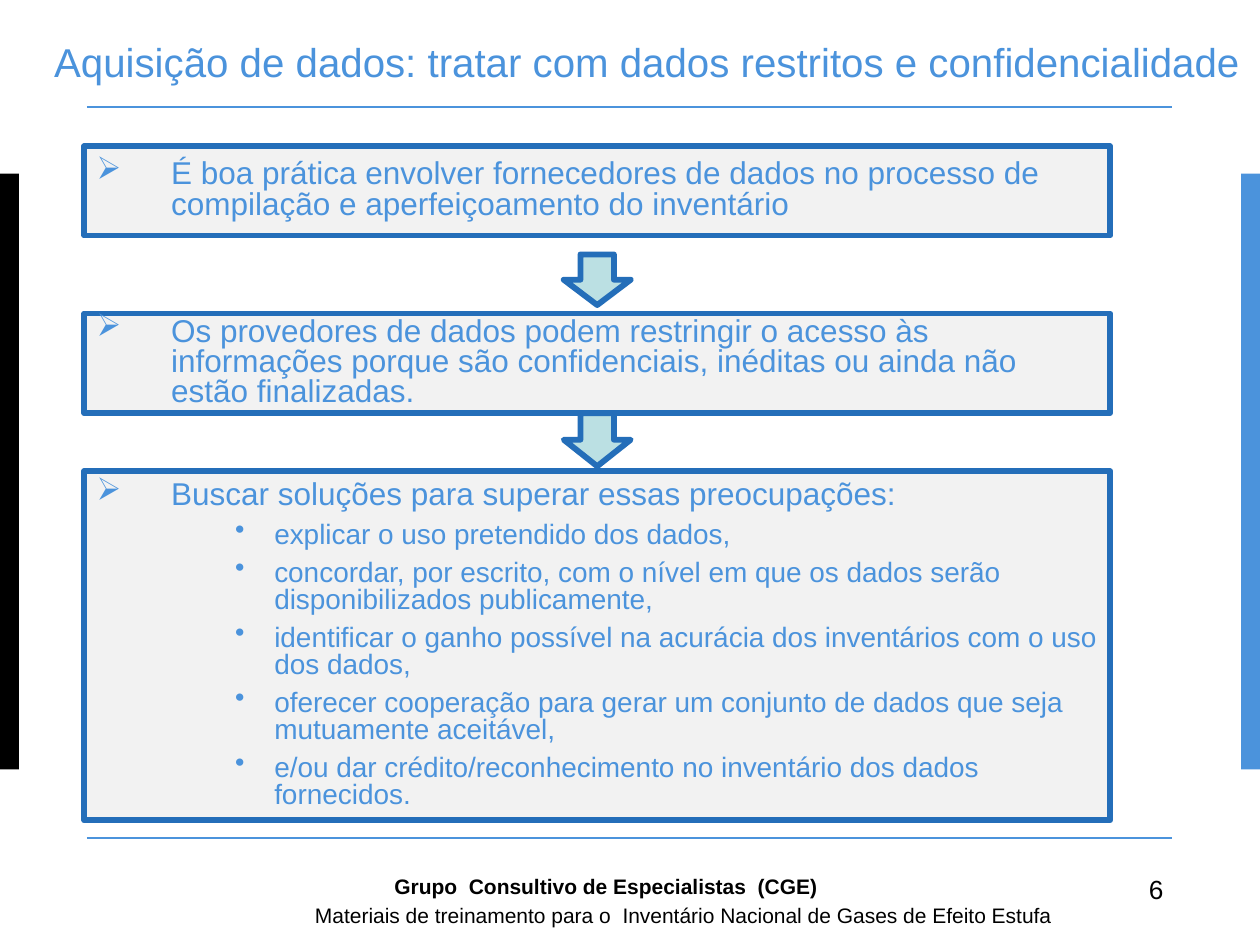
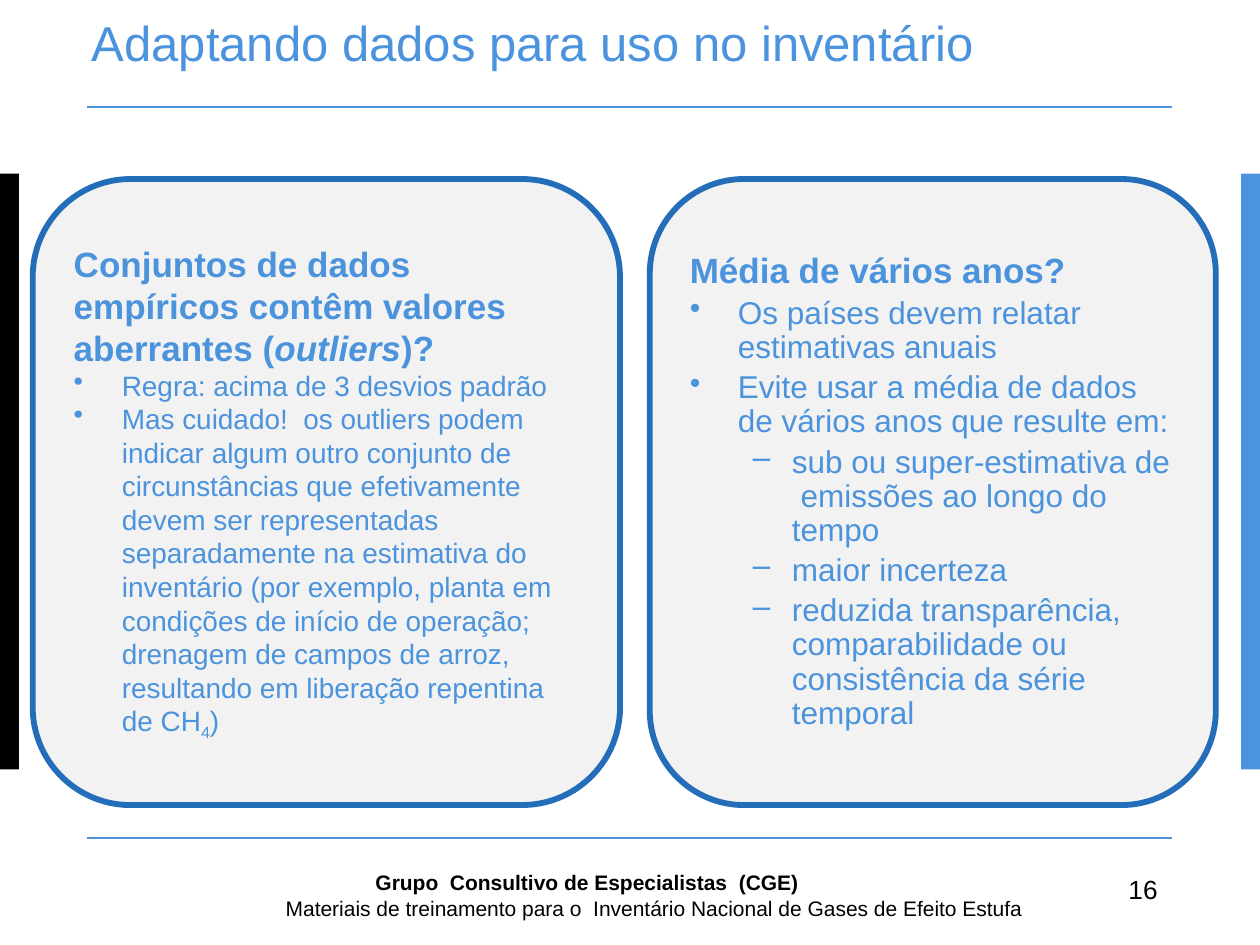
from pptx import Presentation
from pptx.dml.color import RGBColor as Rgb
from pptx.enum.shapes import MSO_CONNECTOR as Link, MSO_SHAPE as Kind
from pptx.enum.text import MSO_ANCHOR as Anchor, MSO_AUTO_SIZE as Auto, PP_ALIGN as Align
from pptx.oxml.ns import qn
from pptx.util import Cm, Pt
from lxml.etree import SubElement

HUES = {"ink": "000000", "sky": "4B93DC", "edge": "246EB9",
        "pale": "F2F2F2", "mint": "BBE0E3"}
FACE = "Arial"
WIDE, HIGH = 25.4, 19.05
EDGE = 3.35

STYLES = {
    "step": dict(size=18, mark="➢", left=1.5, hang=1.5, lead=0.8),
    "item": dict(size=16, mark="•", left=3.58, hang=0.79, lead=0.8, gap=6.4),
    "head": dict(size=20, bold=True),
    "note": dict(size=16, mark="•", left=0.97, hang=0.97),
    "top": dict(size=20, bold=True, lead=0.9),
    "point": dict(size=18, mark="•", left=0.97, hang=0.97, lead=0.9, gap=3.6),
    "dash": dict(size=18, mark="–", left=2.06, hang=0.79, lead=0.9, gap=3.6),
}


def hue(name):
    return Rgb.from_string(HUES[name])


def style(para, size, color="sky", bold=False, mark=None, left=0, hang=0,
          lead=None, gap=0):
    para.alignment = Align.LEFT
    if lead:
        para.line_spacing = lead
    para.space_before = Pt(gap)
    if mark:
        props = para._p.get_or_add_pPr()
        props.set("marL", str(Cm(left)))
        props.set("indent", str(-Cm(hang)))
        SubElement(props, qn("a:buChar"), char=mark)
    font = para.font
    font.name, font.size, font.bold = FACE, Pt(size), bold
    font.color.rgb = hue(color)


def write(frame, paras):
    frame.word_wrap = True
    for pos, (name, *runs) in enumerate(paras):
        para = frame.add_paragraph() if pos else frame.paragraphs[0]
        style(para, **STYLES[name])
        for part in runs:
            text, look = part if isinstance(part, tuple) else (part, None)
            run = para.add_run()
            run.text = text
            if look == "slant":
                run.font.italic = True
            elif look == "sub":
                run.font._element.set("baseline", "-25000")


def block(slide, kind, box, fill, line=None):
    shape = slide.shapes.add_shape(kind, *map(Cm, box))
    shape.shadow.inherit = False
    shape.fill.solid()
    shape.fill.fore_color.rgb = hue(fill)
    if line:
        shape.line.color.rgb = hue(line)
        shape.line.width = Pt(EDGE)
    else:
        shape.line.fill.background()
    return shape


def panel(slide, kind, box, paras):
    frame = block(slide, kind, box, "pale", "edge").text_frame
    frame.vertical_anchor = Anchor.MIDDLE
    write(frame, paras)


def label(slide, box, text, size, bold=False):
    frame = slide.shapes.add_textbox(*map(Cm, box)).text_frame
    frame.word_wrap = True
    para = frame.paragraphs[0]
    para.text = text
    style(para, size, "ink", bold)


def frame_page(slide):
    band = 0.38
    for left, fill in ((0, "ink"), (WIDE - band, "sky")):
        block(slide, Kind.RECTANGLE, (left, 3.5, band, 12.01), fill)
    for y in (2.16, 16.89):
        rule = slide.shapes.add_connector(
            Link.STRAIGHT, Cm(1.75), Cm(y), Cm(23.62), Cm(y))
        rule.line.color.rgb = hue("sky")
        rule.line.width = Pt(1)
        SubElement(rule._element.spPr, qn("a:effectLst"))


def head(slide, box, text, size, lead):
    title = slide.shapes.title
    title.left, title.top, title.width, title.height = map(Cm, box)
    frame = title.text_frame
    frame.auto_size = Auto.NONE
    frame.word_wrap = True
    frame.vertical_anchor = Anchor.MIDDLE
    frame.margin_left = frame.margin_right = 0
    frame.margin_top = frame.margin_bottom = 0
    frame.text = text
    style(frame.paragraphs[0], size, lead=lead)


def foot(slide, num, num_box, unit_box, work_box):
    label(slide, num_box, num, 15)
    label(slide, work_box,
          "Materiais de treinamento para o  Inventário Nacional de Gases de Efeito Estufa", 12)
    label(slide, unit_box, "Grupo  Consultivo de Especialistas  (CGE)", 12, True)


def page(deck):
    slide = deck.slides.add_slide(deck.slide_layouts[5])
    frame_page(slide)
    return slide


def flow(slide, left, width, steps, drops):
    for top, height, paras in steps:
        panel(slide, Kind.RECTANGLE, (left, top, width, height), paras)
    size = 1.35
    mid = left + (width - size) / 2
    for top, height in drops:
        block(slide, Kind.DOWN_ARROW, (mid, top, size, height), "mint", "edge")


def access(deck):
    slide = page(deck)
    head(slide, (1.09, 0.2, 24.31, 1.9),
         "Aquisição de dados: tratar com dados restritos e confidencialidade", 23, 1.2)
    items = (
        "explicar o uso pretendido dos dados,",
        "concordar, por escrito, com o nível em que os dados serão disponibilizados publicamente,",
        "identificar o ganho possível na acurácia dos inventários com o uso dos dados,",
        "oferecer cooperação para gerar um conjunto de dados que seja mutuamente aceitável,",
        "e/ou dar crédito/reconhecimento no inventário dos dados fornecidos.",
    )
    steps = (
        (2.95, 1.8, [("step", "É boa prática envolver fornecedores de dados no processo de "
                              "compilação e aperfeiçoamento do inventário")]),
        (6.32, 2.01, [("step", "Os provedores de dados podem restringir o acesso às informações "
                               "porque são confidenciais, inéditas ou ainda não estão "
                               "finalizadas.")]),
        (9.5, 7.04, [("step", "Buscar soluções para superar essas preocupações:"),
                     *(("item", text) for text in items)]),
    )
    flow(slide, 1.7, 20.68, steps, ((5.13, 1.02), (8.33, 1.07)))
    foot(slide, "6", (22.91, 17.48, 0.79, 0.89), (7.7, 17.48, 10, 0.58),
         (6.1, 18.06, 15.75, 0.51))


def adapt(deck):
    slide = page(deck)
    head(slide, (1.85, 0, 21.64, 2.34),
         "Adaptando dados para uso no inventário", 28, Pt(15))
    odd = [
        ("head", "Conjuntos de dados  empíricos contêm valores aberrantes (",
         ("outliers", "slant"), ")?"),
        ("note", "Regra: acima de 3 desvios padrão"),
        ("note", "Mas cuidado!  os outliers podem indicar algum outro conjunto de "
                 "circunstâncias que efetivamente devem ser representadas separadamente na "
                 "estimativa do inventário (por exemplo, planta em condições de início de "
                 "operação; drenagem de campos de arroz, resultando em liberação repentina "
                 "de CH", ("4", "sub"), ")"),
    ]
    mean = [
        ("top", "Média de vários anos?"),
        ("point", "Os países devem relatar estimativas anuais"),
        ("point", "Evite usar a média de dados de vários anos que resulte em:"),
        ("dash", "sub ou super-estimativa de  emissões ao longo do tempo"),
        ("dash", "maior incerteza"),
        ("dash", "reduzida transparência,  comparabilidade ou consistência da série temporal"),
    ]
    for left, width, paras in ((0.66, 11.84, odd), (13.1, 11.41, mean)):
        panel(slide, Kind.ROUNDED_RECTANGLE, (left, 3.61, width, 12.62), paras)
    foot(slide, "16", (22.5, 17.48, 1.2, 0.89), (7.32, 17.4, 10.39, 0.69),
         (5.51, 17.93, 16.36, 0.64))


def main():
    deck = Presentation()
    deck.slide_width, deck.slide_height = Cm(WIDE), Cm(HIGH)
    access(deck)
    adapt(deck)
    deck.save("out.pptx")


if __name__ == "__main__":
    main()
